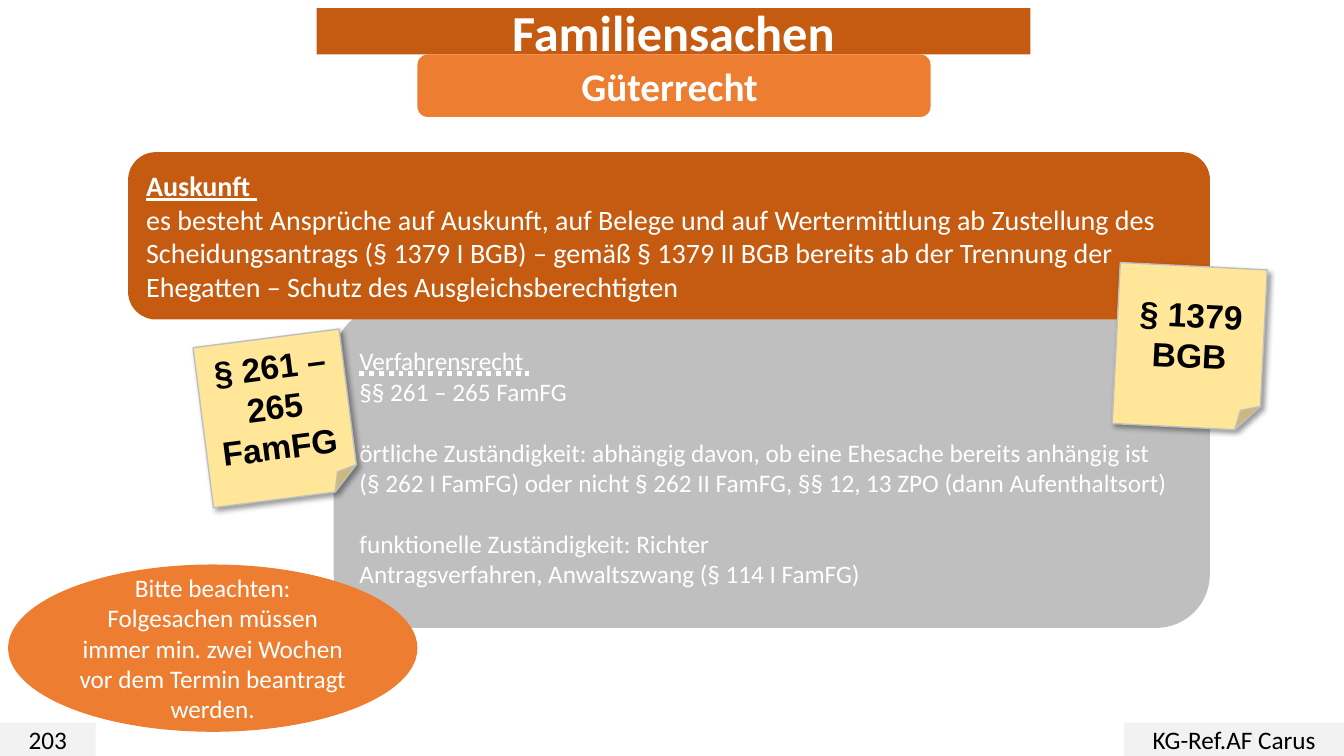
from lxml import etree
from pptx import Presentation
from pptx.dml.color import RGBColor
from pptx.enum.shapes import MSO_SHAPE
from pptx.enum.text import MSO_ANCHOR, MSO_AUTO_SIZE, MSO_UNDERLINE, PP_ALIGN
from pptx.oxml import parse_xml
from pptx.oxml.ns import nsdecls, qn
from pptx.util import Inches, Pt

WIDE, HIGH = Inches(13.33), Inches(7.5)
WHITE = RGBColor(0xFF, 0xFF, 0xFF)
BLACK = RGBColor(0, 0, 0)
RUST = RGBColor(0xC5, 0x5A, 0x11)
ORANGE = RGBColor(0xED, 0x7D, 0x31)
GREY = RGBColor(0xBF, 0xBF, 0xBF)
PALE = RGBColor(0xF2, 0xF2, 0xF2)
YELLOW = RGBColor(0xFF, 0xE6, 0x99)

HEAD = {"size": Pt(36), "bold": True}
SUB = {"size": Pt(28), "bold": True}
LARGE = {"size": Pt(20)}
SMALL = {"size": Pt(18)}
NOTE = {"size": Pt(24), "bold": True, "name": "Arial"}
DOTS = {"underline": MSO_UNDERLINE.DOTTED_HEAVY_LINE}


def place(shape, area):
    """Set left, top, width and height, given as percent of the slide."""
    names = ("left", "top", "width", "height")
    for name, share, full in zip(names, area, (WIDE, HIGH) * 2):
        setattr(shape, name, round(full * share / 100))


def paint(shape, color):
    shape.fill.solid()
    shape.fill.fore_color.rgb = color
    shape.line.fill.background()


def write(shape, lines, form, color=WHITE, align=PP_ALIGN.CENTER):
    """Fill a shape with (text, extra format, space before) lines."""
    frame = shape.text_frame
    frame.word_wrap = True
    frame.auto_size = MSO_AUTO_SIZE.NONE
    frame.vertical_anchor = MSO_ANCHOR.MIDDLE
    frame.text = "\n".join(text for text, _, _ in lines)
    for para, (_, extra, gap) in zip(frame.paragraphs, lines):
        para.alignment = align
        para.space_before = Pt(gap)
        for run in para.runs:
            run.font.color.rgb = color
            for name, value in {"name": "Calibri", **form, **extra}.items():
                setattr(run.font, name, value)


def add_box(slide, kind, area, fill):
    box = slide.shapes.add_shape(kind, 0, 0, 0, 0)
    place(box, area)
    box.shadow.inherit = False
    paint(box, fill)
    return box


def add_label(slide, kind, area, fill, text, form, color=WHITE):
    box = add_box(slide, kind, area, fill)
    write(box, [(text, {}, 0)], form, color)


def add_note(slide, left, top, turn, text):
    """Add a tilted sticky note with a soft shadow."""
    note = add_box(slide, MSO_SHAPE.FOLDED_CORNER, (left, top, 10.95, 21.33), YELLOW)
    note.rotation = turn
    note.line.color.rgb = GREY
    note.line.width = Pt(1)
    glow = parse_xml(
        f'<a:outerShdw {nsdecls("a")} blurRad="{Pt(4)}" dist="{Pt(3)}" dir="2700000">'
        '<a:srgbClr val="000000"><a:alpha val="40000"/></a:srgbClr></a:outerShdw>')
    note.element.spPr.find(qn("a:effectLst")).append(glow)
    write(note, [(text, {}, 0)], NOTE, BLACK)


def round_off(holder, area, fill):
    """Turn a placeholder into a filled round box."""
    place(holder, area)
    geom = f'<a:prstGeom {nsdecls("a")} prst="roundRect"><a:avLst/></a:prstGeom>'
    holder.element.spPr.insert(1, parse_xml(geom))
    paint(holder, fill)


def drop_bullets(holder):
    for para in holder.text_frame.paragraphs:
        props = para._p.get_or_add_pPr()
        props.set("marL", "0")
        props.set("indent", "0")
        etree.SubElement(props, qn("a:buNone"))


def main():
    deck = Presentation()
    deck.slide_width, deck.slide_height = WIDE, HIGH
    slide = deck.slides.add_slide(deck.slide_layouts[1])
    title, body = slide.placeholders

    round_off(title, (23.56, 1.07, 53.11, 6.13), RUST)
    write(title, [("Familiensachen", {}, 0)], HEAD)

    round_off(body, (24.83, 40.53, 65.19, 42.53), GREY)
    write(body, [
        ("Verfahrensrecht ", DOTS, 0),
        ("§§ 261 – 265 FamFG", {}, 0),
        ("örtliche Zuständigkeit: abhängig davon, ob eine Ehesache bereits anhängig ist \v"
         "(§ 262 I FamFG) oder nicht § 262 II FamFG, §§ 12, 13 ZPO (dann Aufenthaltsort)",
         {}, 22),
        ("funktionelle Zuständigkeit: Richter", {}, 22),
        ("Antragsverfahren, Anwaltszwang (§ 114 I FamFG)", {}, 0),
    ], SMALL, align=PP_ALIGN.LEFT)
    drop_bullets(body)

    bar, rect = MSO_SHAPE.ROUNDED_RECTANGLE, MSO_SHAPE.RECTANGLE
    add_label(slide, bar, (31.06, 7.2, 38.18, 8.27), ORANGE, "Güterrecht ", SUB)
    add_label(slide, rect, (0, 95.6, 7.13, 4.4), PALE, "203", SMALL, BLACK)
    add_label(slide, rect, (83.65, 95.6, 16.35, 4.4), PALE, "KG-Ref.AF Carus", SMALL, BLACK)

    claim = add_box(slide, bar, (9.53, 20.13, 80.5, 22.13), RUST)
    write(claim, [
        ("Auskunft ", {"bold": True, "underline": True}, 0),
        ("es besteht Ansprüche auf Auskunft, auf Belege und auf Wertermittlung ab "
         "Zustellung des Scheidungsantrags (§ 1379 I BGB) – gemäß § 1379 II BGB bereits "
         "ab der Trennung der Ehegatten – Schutz des Ausgleichsberechtigten", {}, 0),
    ], LARGE, align=PP_ALIGN.LEFT)

    add_note(slide, 83.05, 35.2, 2.9, "§ 1379 BGB")
    add_note(slide, 15.08, 44.67, 352.7, "§ 261 – 265 FamFG")
    add_label(slide, MSO_SHAPE.OVAL, (0.6, 74.67, 30.46, 22.13), ORANGE,
              "Bitte beachten: Folgesachen müssen immer min. zwei Wochen vor dem Termin "
              "beantragt werden.", SMALL)
    deck.save("out.pptx")


if __name__ == "__main__":
    main()
